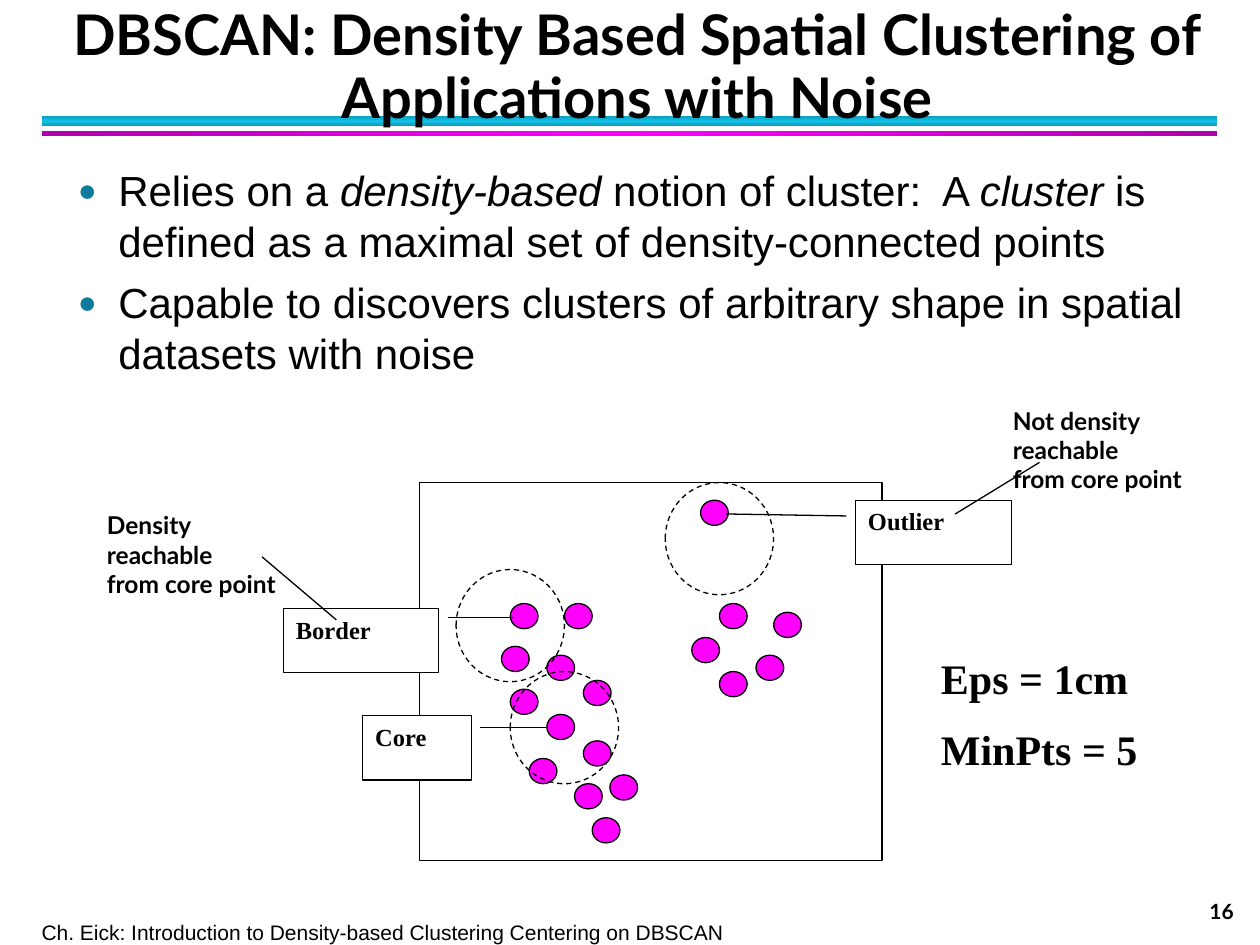
import copy
import pptx
import pptx.util
import pptx.dml.color
import pptx.enum.dml
import pptx.enum.shapes
import pptx.enum.text
import pptx.oxml.ns
from lxml import etree

Inches = pptx.util.Inches
Pt = pptx.util.Pt
MSO_SHAPE = pptx.enum.shapes.MSO_SHAPE
qn = pptx.oxml.ns.qn


def color(hex_string):
    return pptx.dml.color.RGBColor.from_string(hex_string)


def write(frame, lines, font, size, bold=False):
    frame.word_wrap = True
    frame.text = "\n".join(lines)
    for paragraph in frame.paragraphs:
        paragraph.alignment = pptx.enum.text.PP_ALIGN.LEFT
        for run in paragraph.runs:
            run.font.name = font
            run.font.size = Pt(size)
            run.font.bold = bold
            run.font.color.rgb = color("000000")


prs = pptx.Presentation()
prs.slide_width = Inches(10)
prs.slide_height = Inches(7.5)
slide = prs.slides.add_slide(prs.slide_layouts[6])
shapes = slide.shapes

for top, height, edge, middle, angle in [
    (0.92, 0.08, "0E9BBA", "12C2E9", 90),
    (1.04, 0.04, "B200B2", "FF00FF", 0),
]:
    rule = shapes.add_shape(MSO_SHAPE.RECTANGLE, Inches(0.33), Inches(top), Inches(9.33), Inches(height))
    rule.shadow.inherit = False
    rule.line.fill.background()
    rule.fill.gradient()
    rule.fill.gradient_angle = angle
    stop_list = rule._element.spPr.find(".//" + qn("a:gsLst"))
    stop_list.insert(1, copy.deepcopy(stop_list[0]))
    for stop, position, shade in zip(rule.fill.gradient_stops, (0, 0.5, 1), (edge, middle, edge)):
        stop.position = position
        stop.color.rgb = color(shade)

footer = shapes.add_textbox(Inches(0.33), Inches(7.25), Inches(9.15), Inches(0.25)).text_frame
footer.margin_left = footer.margin_right = footer.margin_top = footer.margin_bottom = 0
footer.vertical_anchor = pptx.enum.text.MSO_ANCHOR.BOTTOM
write(footer, ["Ch. Eick: Introduction to Density-based Clustering Centering on DBSCAN"], "Arial", 12)
footer.paragraphs[0].line_spacing = Pt(20)

page_number = shapes.add_textbox(Inches(9.5), Inches(7.08), Inches(0.5), Inches(0.42)).text_frame
write(page_number, ["16"], "Lato", 12, True)

title = shapes.add_textbox(Inches(0.06), Inches(0), Inches(10), Inches(1.08)).text_frame
title.vertical_anchor = pptx.enum.text.MSO_ANCHOR.BOTTOM
write(title, ["DBSCAN: Density Based Spatial Clustering of Applications with Noise"], "Lato", 32, True)
title.paragraphs[0].alignment = pptx.enum.text.PP_ALIGN.CENTER
title.paragraphs[0].line_spacing = Pt(36)

body = shapes.add_textbox(Inches(0.52), Inches(1.26), Inches(9.08), Inches(5.33)).text_frame
write(body, ["Relies on a ", "Capable to discovers clusters of arbitrary shape in spatial datasets with noise"], "Arial", 24)
for words, italic in [
    ("density-based", True),
    (" notion of cluster:  A ", False),
    ("cluster", True),
    (" is defined as a maximal set of density-connected points", False),
]:
    run = body.paragraphs[0].add_run()
    run.text = words
    run.font.name = "Arial"
    run.font.size = Pt(24)
    run.font.italic = italic
    run.font.color.rgb = color("000000")
for paragraph in body.paragraphs:
    paragraph.space_before = Pt(2.4)
    paragraph.space_after = Pt(4)
    properties = paragraph._p.get_or_add_pPr()
    properties.set("marL", str(Inches(0.32)))
    properties.set("indent", str(-Inches(0.32)))
    bullet_color = etree.SubElement(properties, qn("a:buClr"))
    etree.SubElement(bullet_color, qn("a:srgbClr"), val="0C7B9C")
    etree.SubElement(properties, qn("a:buSzPct"), val="75000")
    etree.SubElement(properties, qn("a:buFont"), typeface="Arial")
    etree.SubElement(properties, qn("a:buChar"), char="●")

points = [
    (4.05, 4.79), (3.98, 5.13), (4.34, 5.2), (4.48, 4.79), (4.63, 5.4), (4.05, 5.47),
    (4.34, 5.67), (4.2, 6.02), (4.56, 6.22), (4.7, 6.49), (4.63, 5.88), (4.84, 6.15),
    (5.56, 3.97), (5.71, 4.79), (5.49, 5.06), (6, 5.2), (6.14, 4.86), (5.71, 5.33),
]
neighborhoods = [(3.62, 4.52), (4.05, 5.33), (5.28, 3.83)]
outlines = [(MSO_SHAPE.OVAL, x, y, 0.22, 0.2, "FF00FF", False) for x, y in points]
outlines.append((MSO_SHAPE.RECTANGLE, 3.33, 3.83, 3.67, 3, None, False))
outlines += [(MSO_SHAPE.OVAL, x, y, 0.86, 0.89, None, True) for x, y in neighborhoods]
for kind, x, y, width, height, fill, dashed in outlines:
    outline = shapes.add_shape(kind, Inches(x), Inches(y), Inches(width), Inches(height))
    outline.shadow.inherit = False
    outline.line.color.rgb = color("000000")
    outline.line.width = Pt(0.75)
    if fill:
        outline.fill.solid()
        outline.fill.fore_color.rgb = color(fill)
    else:
        outline.fill.background()
    if dashed:
        outline.line.dash_style = pptx.enum.dml.MSO_LINE.DASH

for role, x, y, width, pointer in [
    ("Core", 2.88, 5.68, 0.86, (0.188, 1.083, 0.188, 1.688)),
    ("Border", 2.25, 4.83, 1.23, (0.145, 1.059, 0.145, 1.485)),
    ("Outlier", 6.79, 3.97, 1.24, (0.245, -0.058, 0.214, -0.828)),
]:
    callout = shapes.add_shape(MSO_SHAPE.LINE_CALLOUT_1, Inches(x), Inches(y), Inches(width), Inches(0.51))
    callout.shadow.inherit = False
    callout.fill.solid()
    callout.fill.fore_color.rgb = color("FFFFFF")
    callout.line.color.rgb = color("000000")
    callout.line.width = Pt(0.75)
    for index, value in enumerate(pointer):
        callout.adjustments[index] = value
    callout.text_frame.vertical_anchor = pptx.enum.text.MSO_ANCHOR.TOP
    write(callout.text_frame, [role], "Times New Roman", 14, True)

parameters = shapes.add_textbox(Inches(7.37), Inches(5.13), Inches(1.8), Inches(1.1)).text_frame
write(parameters, ["Eps = 1cm", "MinPts = 5"], "Times New Roman", 24, True)
parameters.paragraphs[1].space_before = Pt(12)

for reach, x, y, width, start, end in [
    ("Density reachable", 0.75, 4, 1.73, (2.08, 4.42), (2.67, 4.92)),
    ("Not density reachable", 7.94, 3.17, 2.06, (8.25, 3.67), (7.58, 4.08)),
]:
    explanation = shapes.add_textbox(Inches(x), Inches(y), Inches(width), Inches(0.57)).text_frame
    write(explanation, [reach, "from core point"], "Lato", 14, True)
    leader = shapes.add_connector(
        pptx.enum.shapes.MSO_CONNECTOR.STRAIGHT, *[Inches(value) for value in start + end]
    )
    leader.line.color.rgb = color("000000")
    leader.line.width = Pt(0.75)
    etree.SubElement(leader._element.spPr, qn("a:effectLst"))

prs.save("out.pptx")
